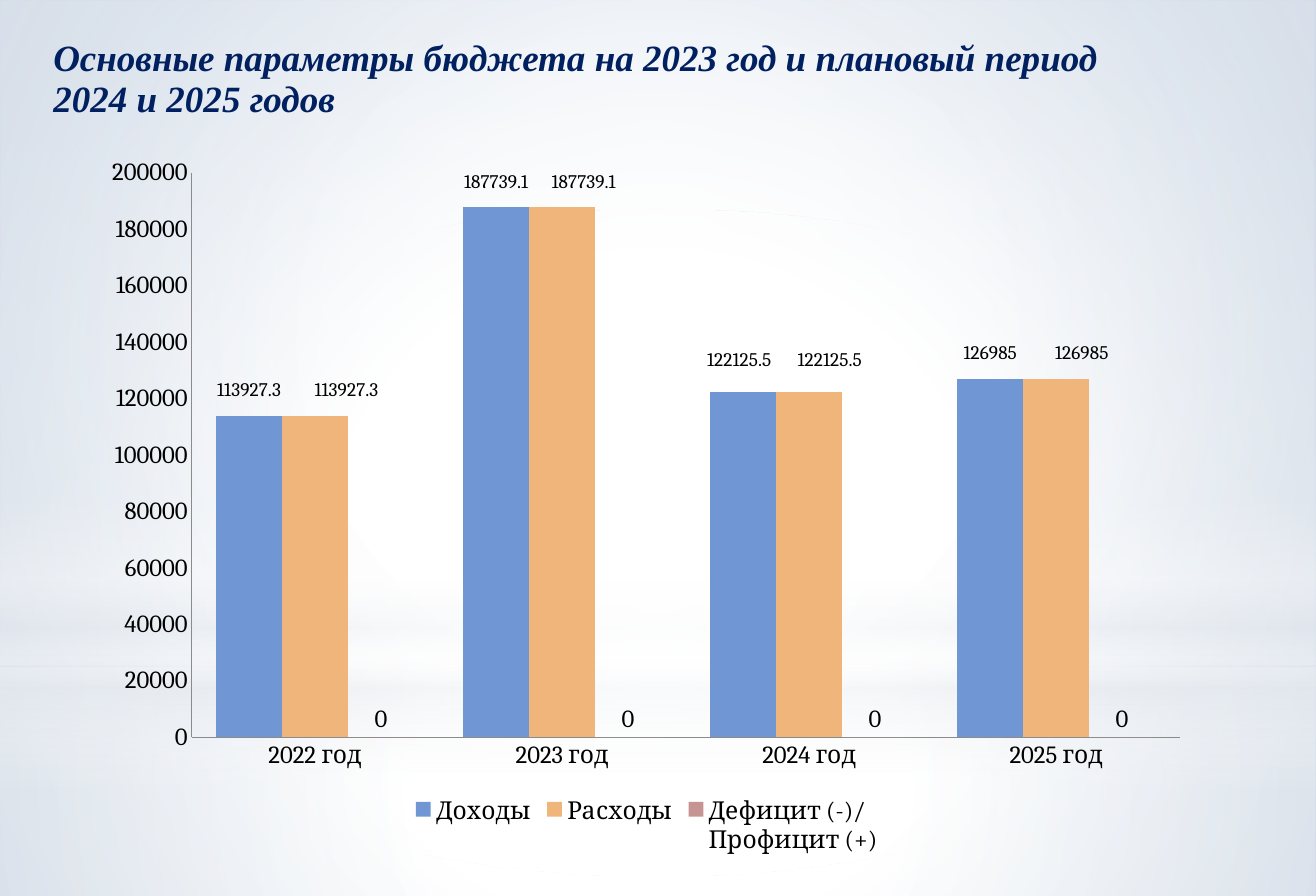
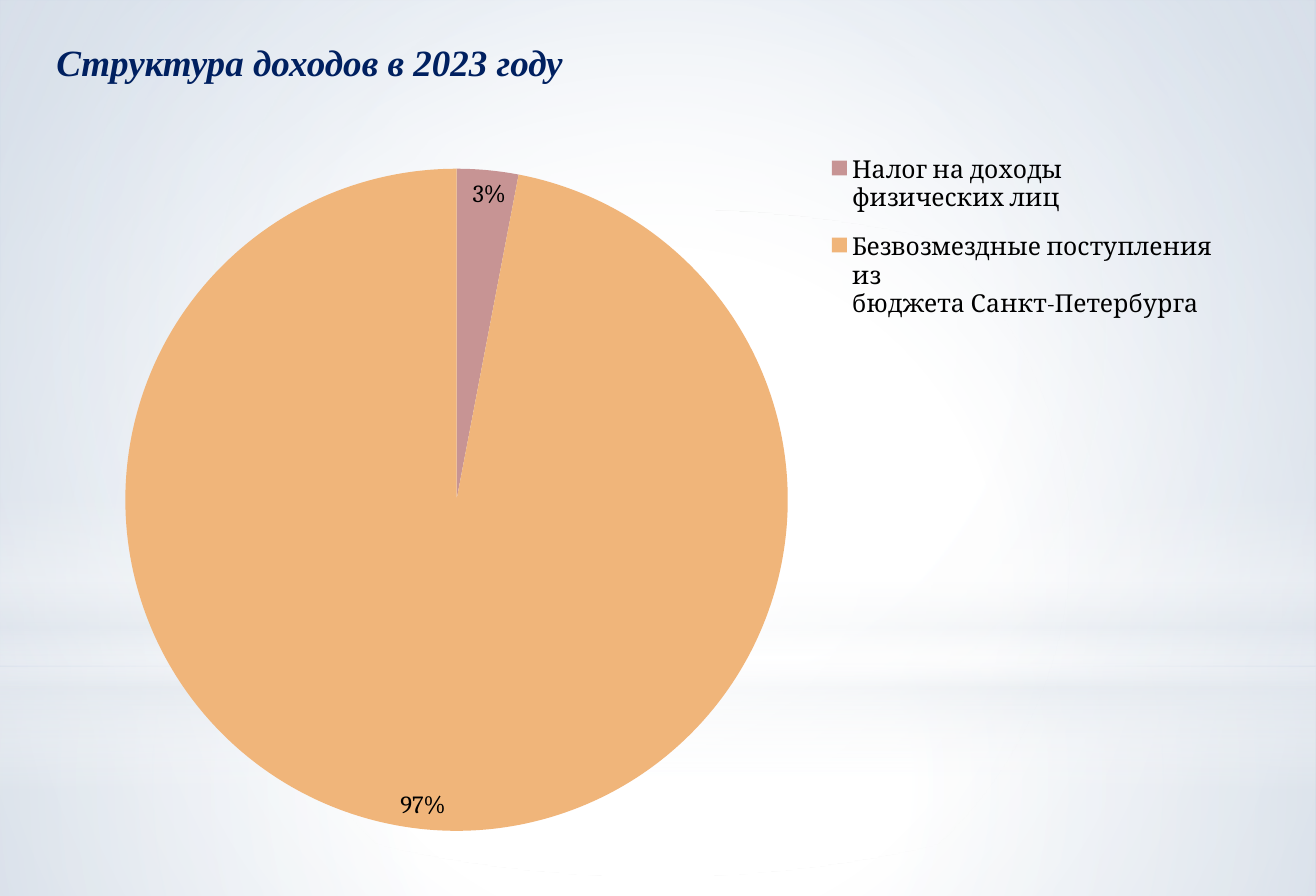
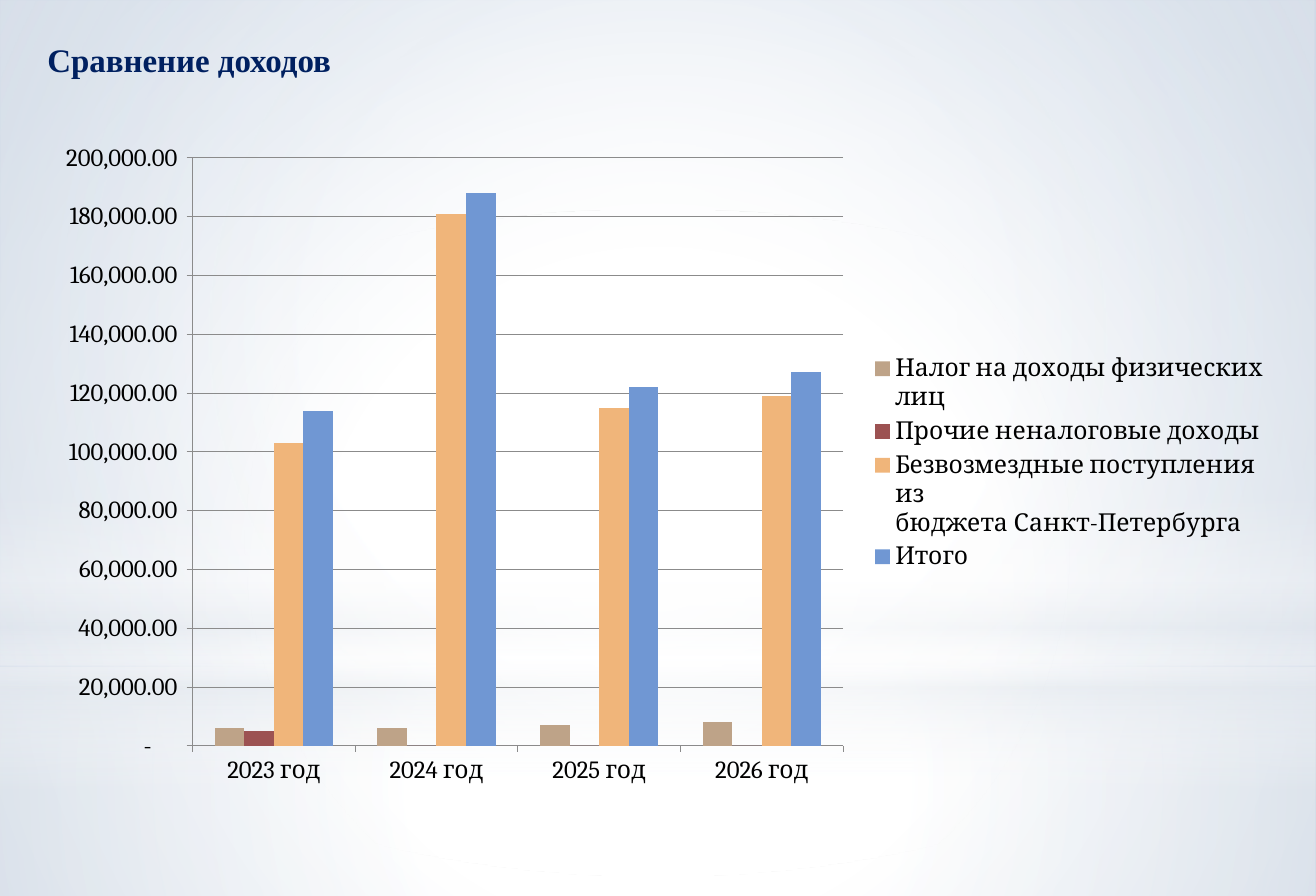
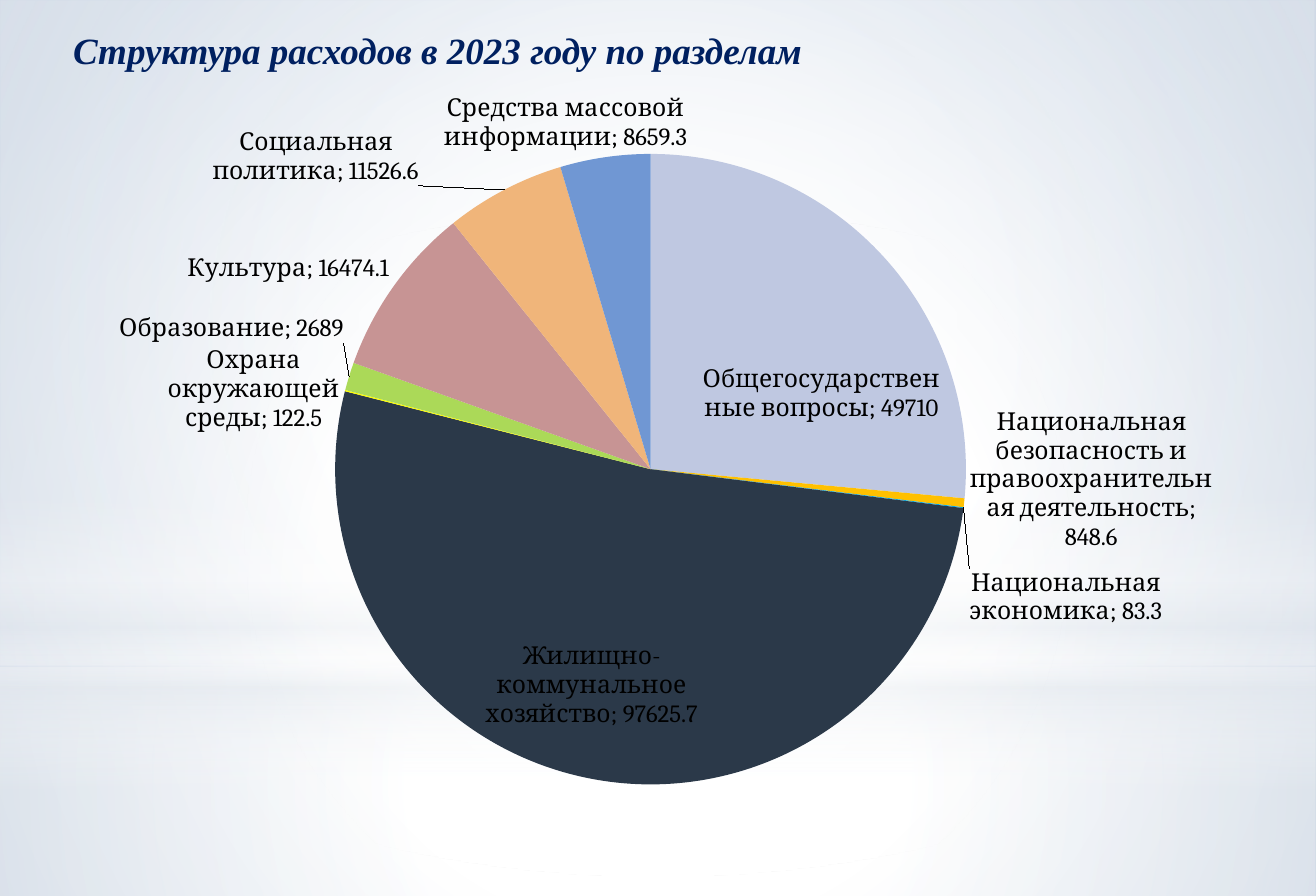
from lxml import etree
from pptx import Presentation
from pptx.chart.data import CategoryChartData
from pptx.dml.color import RGBColor
from pptx.enum.chart import (
    XL_CHART_TYPE as ChartType,
    XL_LABEL_POSITION as LabelPos,
    XL_LEGEND_POSITION as LegendPos,
    XL_TICK_MARK as Tick,
)
from pptx.enum.shapes import MSO_SHAPE as Shape
from pptx.oxml import parse_xml
from pptx.oxml.ns import nsdecls, qn
from pptx.util import Inches, Pt

COLORS = {
    "title": "002060", "text": "000000", "axis": "8B8B8B",
    "white": "FFFFFF", "mist": "E4E9EF", "edge": "AABDD5",
    "blue": "7097D3", "orange": "F0B57A", "rose": "C79494",
    "sand": "BEA388", "brick": "9C5252", "lilac": "BFC8E1",
    "amber": "FFC000", "cyan": "00B0F0", "navy": "2B3949",
    "yellow": "FFFF00", "green": "ABD958",
}
WIDTH, HEIGHT = 13.33, 9.08
CENTER = (50, 50, 50, 50)
COLUMN, PIE = ChartType.COLUMN_CLUSTERED, ChartType.PIE
OUTSIDE, INSIDE, MIDDLE = LabelPos.OUTSIDE_END, LabelPos.INSIDE_END, LabelPos.CENTER


def paint_gradient(fill, holder, stops, focus):
    """Fill with (position, colour, opacity) stops, circular if focus is given."""
    fill.gradient()
    gradient = next(holder.iter(qn("a:gradFill")))
    marks = "".join(
        f'<a:gs pos="{pos * 1000}"><a:srgbClr val="{COLORS[color]}">'
        f'<a:alpha val="{opacity * 1000}"/></a:srgbClr></a:gs>'
        for pos, color, opacity in stops)
    if focus:
        sides = " ".join(f'{side}="{value * 1000}"' for side, value in zip("ltrb", focus))
        direction = f'<a:path path="circle"><a:fillToRect {sides}/></a:path>'
    else:
        direction = '<a:lin ang="5400000" scaled="0"/>'
    gradient.getparent().replace(gradient, parse_xml(
        f'<a:gradFill {nsdecls("a")} rotWithShape="1"><a:gsLst>{marks}</a:gsLst>'
        f'{direction}</a:gradFill>'))


def set_layout(parent, index, chart_box, lengths, inner=False):
    """Place a chart part (x, y, w, h) or shift a label (x, y), in inches."""
    for old in parent.findall(qn("c:layout")):
        parent.remove(old)
    parts = '<c:layoutTarget val="inner"/>' if inner else ""
    if len(lengths) == 4:
        parts += '<c:xMode val="edge"/><c:yMode val="edge"/>'
    parts += "".join(f'<c:{name} val="{length / whole:.4f}"/>'
                     for name, length, whole in zip("xywh", lengths, chart_box[2:] * 2))
    parent.insert(index, parse_xml(
        f'<c:layout {nsdecls("c")}><c:manualLayout>{parts}</c:manualLayout></c:layout>'))


deck = Presentation()
deck.slide_width, deck.slide_height = Inches(WIDTH), Inches(HEIGHT)
blank = deck.slide_layouts[6]
master = deck.slide_master

# Shared background, kept on the master
paint_gradient(master.background.fill, master.element,
               [(0, "white", 100), (42, "white", 100), (100, "edge", 100)], (24, 44, 24, 12))
bands = [
    (Shape.RECTANGLE, 6.76, 2.32,
     [(0, "white", 91), (37, "white", 76), (100, "mist", 79)], CENTER),
    (Shape.RECTANGLE, 0, 6.76,
     [(0, "white", 89), (48, "white", 62), (100, "mist", 79)], CENTER),
    (Shape.RECTANGLE, 4.99, 3.03,
     [(0, "white", 0), (29, "white", 30), (45, "mist", 40),
      (55, "white", 26), (65, "mist", 60), (100, "white", 0)], None),
    (Shape.OVAL, 2.12, 6.76, [(0, "white", 100), (56, "white", 0)], CENTER),
]
first_slide = deck.slides.add_slide(blank)
master_tree = master.element.cSld.spTree
for position, (kind, top, height, stops, focus) in enumerate(bands):
    band = first_slide.shapes.add_shape(kind, 0, Inches(top), Inches(WIDTH), Inches(height))
    band.shadow.inherit = False
    band.line.fill.background()
    paint_gradient(band.fill, band.element, stops, focus)
    master_tree.insert(2 + position, band.element)

# Content of the slides; labels hold, per series, (position, dx, dy) of each point
totals = [113927.3, 187739.1, 122125.5, 126985]
pages = [
    {
        "title": "Основные параметры бюджета на 2023 год и плановый период 2024 и 2025 годов",
        "title_box": (0.54, 0.39, 11.27, 0.74), "wrap": True, "spacing": 0.93,
        "type": COLUMN, "box": (0.92, 1.47, 11.26, 7.24), "gap": 75,
        "plot": (1.02, 0.28, 10.01, 5.72), "legend": LegendPos.BOTTOM,
        "categories": [f"{year} год" for year in range(2022, 2026)],
        "series": [("Доходы", totals), ("Расходы", totals),
                   ("Дефицит (-)/\nПрофицит (+)", [0, 0, 0, 0])],
        "colors": ["blue", "orange", "rose"],
        "show": ["showVal"], "label_size": 14,
        "labels": [
            [(OUTSIDE, 0, -0.1), (OUTSIDE, 0, -0.1),
             (OUTSIDE, -0.04, -0.17), (OUTSIDE, 0, -0.1)],
            [(OUTSIDE, 0.32, -0.1), (OUTSIDE, 0.22, -0.1),
             (OUTSIDE, 0.21, -0.17), (OUTSIDE, 0.26, -0.1)],
            [],
        ],
    },
    {
        "title": "Структура доходов в 2023 году",
        "title_box": (0.57, 0.4, 5.71, 0.44),
        "type": PIE, "box": (0.92, 1.23, 11.5, 7.32),
        "plot": (0.35, 0.48, 6.71, 6.71),
        "legend": LegendPos.RIGHT, "legend_box": (7.5, 0.15, 3.9, 2.05),
        "categories": ["Налог на доходы физических лиц",
                       "Безвозмездные поступления из\nбюджета Санкт-Петербурга"],
        "series": [("Доходы", [3, 97])],
        "colors": ["rose", "orange"],
        "show": ["showPercent"],
        "labels": [[(INSIDE, 0.19, 0.04), (INSIDE, -0.26, -0.04)]],
    },
    {
        "title": "Сравнение доходов",
        "title_box": (0.48, 0.4, 3.1, 0.44), "title_size": 24, "italic": False,
        "type": COLUMN, "box": (0.37, 1.31, 12.6, 6.77), "gap": 150,
        "plot": (1.58, 0.29, 6.59, 5.96),
        "legend": LegendPos.RIGHT, "legend_box": (8.38, 2.23, 4.16, 2.3),
        "categories": [f"{year} год" for year in range(2023, 2027)],
        "series": [
            ("Налог на доходы физических лиц", [6000, 6000, 7000, 8000]),
            ("Прочие неналоговые доходы", [5000, 0, 0, 0]),
            ("Безвозмездные поступления из\nбюджета Санкт-Петербурга",
             [103000, 181000, 115000, 119000]),
            ("Итого", [114000, 188000, 122000, 127000]),
        ],
        "colors": ["sand", "brick", "orange", "blue"],
        "grid": True, "format": '_(* #,##0.00_);_(* \\(#,##0.00\\);_(* "-"??_);_(@_)',
    },
    {
        "title": "Структура расходов в 2023 году по разделам",
        "title_box": (0.74, 0.28, 7.95, 0.44),
        "type": PIE, "box": (0.43, 0.92, 12.53, 7.8),
        "plot": (0.94, 0.64, 10.44, 6.39),
        "categories": ["Общегосударственные вопросы",
                       "Национальная безопасность и правоохранительная деятельность",
                       "Национальная экономика", "Жилищно-коммунальное хозяйство",
                       "Охрана окружающей среды", "Образование", "Культура",
                       "Социальная политика", "Средства массовой информации"],
        "series": [("Расходы", [49710, 848.6, 83.3, 97625.7, 122.5,
                                2689, 16474.1, 11526.6, 8659.3])],
        "colors": ["lilac", "amber", "cyan", "navy", "yellow",
                   "green", "rose", "orange", "blue"],
        "show": ["showVal", "showCatName"], "leaders": True,
        "labels": [[
            (MIDDLE, 0.55, 0.31), (OUTSIDE, 0, -0.97), (OUTSIDE, 0, 0.61),
            (MIDDLE, -0.3, 0.62), (OUTSIDE, 0, 0.44), (OUTSIDE, 0, -0.32),
            (OUTSIDE, 0, 0), (OUTSIDE, -0.84, 0.01), (OUTSIDE, 0.84, 0)]],
    },
]

for number, page in enumerate(pages):
    slide = deck.slides.add_slide(blank) if number else first_slide

    # Title
    box = slide.shapes.add_textbox(*map(Inches, page["title_box"]))
    frame = box.text_frame
    frame.margin_left = frame.margin_right = frame.margin_top = frame.margin_bottom = 0
    frame.word_wrap = page.get("wrap", False)
    frame.text = page["title"]
    para = frame.paragraphs[0]
    para.line_spacing = page.get("spacing", 1.0)
    font = para.runs[0].font
    font.name, font.size = "Times New Roman", Pt(page.get("title_size", 27))
    font.bold, font.italic = True, page.get("italic", True)
    font.color.rgb = RGBColor.from_string(COLORS["title"])

    # Chart
    data = CategoryChartData()
    data.categories = page["categories"]
    for name, values in page["series"]:
        data.add_series(name, values)
    chart = slide.shapes.add_chart(page["type"], *map(Inches, page["box"]), data).chart
    chart.has_title = False
    chart.font.name, chart.font.size = "Cambria", Pt(18)
    chart.font.color.rgb = RGBColor.from_string(COLORS["text"])
    plot = chart.plots[0]
    plot.vary_by_categories = page["type"] == PIE
    series_list = list(plot.series)
    chart_space = chart._chartSpace
    set_layout(next(chart_space.iter(qn("c:plotArea"))), 0, page["box"], page["plot"], inner=True)

    # Legend
    chart.has_legend = "legend" in page
    if chart.has_legend:
        chart.legend.position = page["legend"]
        chart.legend.include_in_layout = False
        if "legend_box" in page:
            set_layout(next(chart_space.iter(qn("c:legend"))), 1,
                       page["box"], page["legend_box"])

    # Colours of slices or columns
    if page["type"] == PIE:
        painted = [series_list[0].points[i] for i in range(len(page["colors"]))]
    else:
        painted = series_list
        plot.gap_width, plot.overlap = page["gap"], 0
    for item, color in zip(painted, page["colors"]):
        item.format.fill.solid()
        item.format.fill.fore_color.rgb = RGBColor.from_string(COLORS[color])

    # Axes
    if page["type"] == COLUMN:
        grid = page.get("grid", False)
        value_axis = chart.value_axis
        value_axis.minimum_scale, value_axis.maximum_scale = 0, 200000
        value_axis.major_unit = 20000
        value_axis.has_major_gridlines = grid
        value_axis.tick_labels.number_format = page.get("format", "General")
        value_axis.tick_labels.number_format_is_linked = False
        lines = [value_axis.format.line, chart.category_axis.format.line]
        if grid:
            lines.append(value_axis.major_gridlines.format.line)
        for line in lines:
            line.color.rgb = RGBColor.from_string(COLORS["axis"])
            line.width = Pt(0.75)
        for axis in (value_axis, chart.category_axis):
            axis.major_tick_mark = Tick.OUTSIDE if grid else Tick.NONE

    # Data labels: first the series, then the points with a place of their own
    for series, places in zip(series_list, page.get("labels", [])):
        labels = series.data_labels
        labels.show_value = "showVal" in page["show"]
        labels.show_category_name = "showCatName" in page["show"]
        labels.show_percentage = "showPercent" in page["show"]
        labels.position = OUTSIDE
        if labels.show_percentage:
            labels.number_format, labels.number_format_is_linked = "0%", False
        for leader in labels._element.findall(qn("c:showLeaderLines")):
            leader.set("val", str(int(page.get("leaders", False))))
        for index, (position, dx, dy) in enumerate(places):
            label = series.points[index].data_label
            label.font.size = Pt(page.get("label_size", 18))
            label.position = position
            node = labels._element.findall(qn("c:dLbl"))[index]
            if dx or dy:
                set_layout(node, 1, page["box"], (dx, dy))
            for flag in ("showVal", "showCatName", "showPercent"):
                node.find(qn(f"c:{flag}")).set("val", str(int(flag in page["show"])))
            etree.SubElement(node, qn("c:separator")).text = "; "

deck.save("out.pptx")
